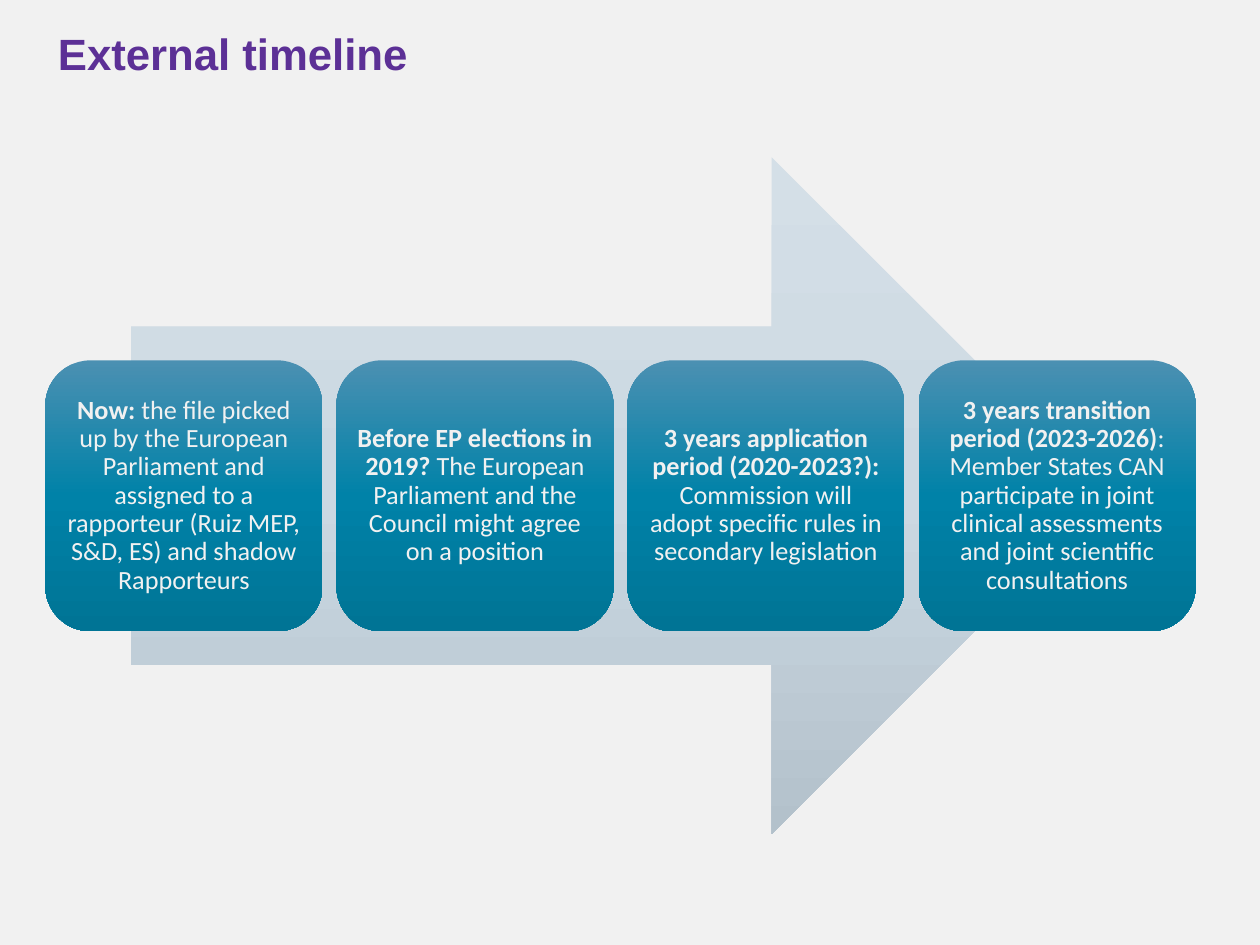
from copy import deepcopy

from pptx import Presentation
from pptx.dml.color import RGBColor
from pptx.enum import shapes, text
from pptx.oxml.ns import qn
from pptx.util import Inches, Pt

COLORS = {
    "background": "F1F1F1",
    "title": "5C3096",
    "step_text": "F1F1F1",
    "arrow": ["D4DFE7", "CBD8E2", "B3C1CB"],
    "step": ["4B90B2", "0082A8", "007495"],
}

STEPS = [
    ("Now: ", "the file picked up by the European Parliament and assigned to a "
     "rapporteur (Ruiz MEP, S&D, ES) and shadow Rapporteurs"),
    ("Before EP elections in 2019? ",
     "The European Parliament and the Council might agree on a position"),
    ("3 years application period (2020-2023?): ",
     "Commission will adopt specific rules in secondary legislation"),
    ("3 years transition period (2023-2026)",
     ": Member States CAN participate in joint clinical assessments "
     "and joint scientific consultations"),
]


def add_gradient_shape(s, kind, left, top, width, height, colors):
    """Add a borderless shape shaded from top to bottom in three colours."""
    sp = s.shapes.add_shape(kind, Inches(left), Inches(top), Inches(width), Inches(height))
    sp.shadow.inherit = False
    sp.line.fill.background()
    sp.fill.gradient()
    sp.fill.gradient_angle = 270
    # The default gradient has two stops; add a third
    stop_list = sp._element.spPr.find(qn("a:gradFill")).find(qn("a:gsLst"))
    stop_list.append(deepcopy(stop_list[0]))
    for stop, position, color in zip(sp.fill.gradient_stops, (0, 0.5, 1), colors):
        stop.position = position
        stop.color.rgb = RGBColor.from_string(color)
    return sp


prs = Presentation()
prs.slide_width, prs.slide_height = Inches(10), Inches(7.5)
s = prs.slides.add_slide(prs.slide_layouts[5])
s.background.fill.solid()
s.background.fill.fore_color.rgb = RGBColor.from_string(COLORS["background"])

# Title
title = s.shapes.title
title.left, title.top = Inches(0.36), Inches(0.21)
title.width, title.height = Inches(7.5), Inches(0.55)
tf = title.text_frame
tf.text = "External timeline"
tf.vertical_anchor = text.MSO_ANCHOR.TOP
tf.auto_size = text.MSO_AUTO_SIZE.NONE
p = tf.paragraphs[0]
p.alignment = text.PP_ALIGN.LEFT
p.line_spacing = 0.9
p.font.name, p.font.size, p.font.bold = "Arial", Pt(25), True
p.font.color.rgb = RGBColor.from_string(COLORS["title"])

# Timeline arrow
add_gradient_shape(s, shapes.MSO_SHAPE.RIGHT_ARROW, 1.04, 1.25, 7.77, 5.37, COLORS["arrow"])

# Steps, evenly spaced over the arrow
for i, (lead, detail) in enumerate(STEPS):
    sp = add_gradient_shape(s, shapes.MSO_SHAPE.ROUNDED_RECTANGLE,
                            0.36 + i * 2.31, 2.86, 2.2, 2.15, COLORS["step"])
    tf = sp.text_frame
    tf.word_wrap = True
    tf.vertical_anchor = text.MSO_ANCHOR.MIDDLE
    tf.margin_left = tf.margin_right = tf.margin_top = tf.margin_bottom = Inches(0.06)
    p = tf.paragraphs[0]
    p.alignment = text.PP_ALIGN.CENTER
    p.line_spacing = 0.9
    p.font.name, p.font.size = "Calibri", Pt(15)
    p.font.color.rgb = RGBColor.from_string(COLORS["step_text"])
    for words, bold in ((lead, True), (detail, False)):
        r = p.add_run()
        r.text = words
        r.font.bold = bold

prs.save("out.pptx")
